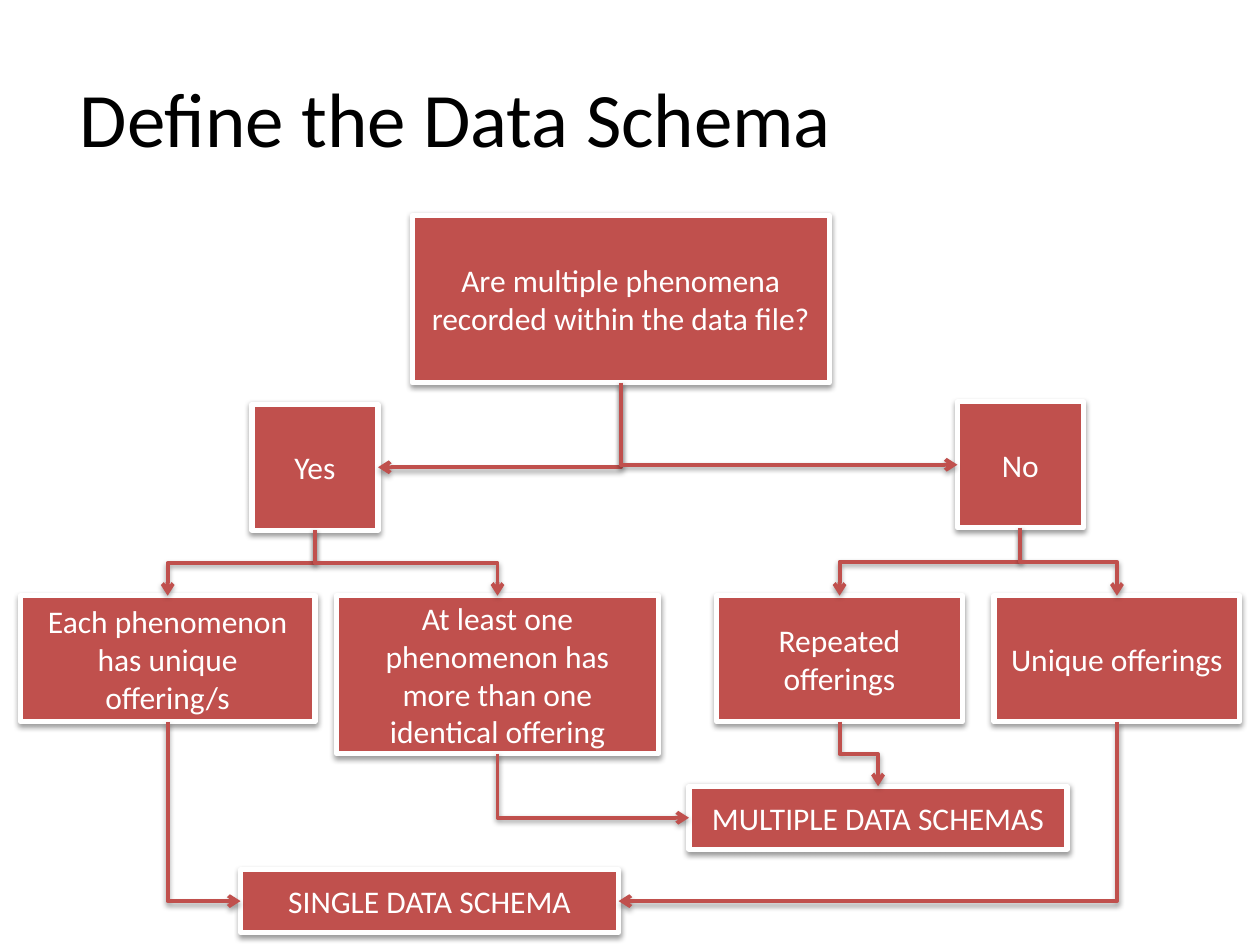
from dataclasses import dataclass

import pptx
import pptx.dml.color
import pptx.enum.shapes
import pptx.enum.text
import pptx.oxml.ns
import pptx.util
from lxml import etree

Cm = pptx.util.Cm
Pt = pptx.util.Pt
qn = pptx.oxml.ns.qn
BOTTOM = 2


@dataclass(frozen=True)
class Theme:
    """Colours, type sizes and line widths used on the slide."""
    font: str = "Calibri"
    title_size: int = 44
    body_size: int = 18
    ink: str = "000000"
    paper: str = "FFFFFF"
    accent: str = "C0504D"
    border: float = 3
    link: float = 2.25


THEME = Theme()

NODES = {
    "question": ("Are multiple phenomena recorded within the data file?", 7.9, 0, 8.41, 3.38),
    "yes": ("Yes", 4.67, 3.81, 2.54, 2.54),
    "no": ("No", 18.89, 3.76, 2.54, 2.54),
    "distinct": ("Each phenomenon has unique offering/s", 0, 7.67, 5.94, 2.54),
    "identical": ("At least one phenomenon has more than one identical offering",
                  6.37, 7.67, 6.5, 3.18),
    "repeated": ("Repeated offerings", 14.04, 7.67, 4.95, 2.54),
    "unique": ("Unique offerings", 19.63, 7.67, 4.95, 2.54),
    "single": ("SINGLE DATA SCHEMA", 4.44, 13.19, 7.62, 1.27),
    "multiple": ("MULTIPLE DATA SCHEMAS", 13.48, 11.51, 7.62, 1.27),
}

LINKS = [
    ("question", "yes", 3),
    ("question", "no", 1),
    ("yes", "distinct", 0),
    ("yes", "identical", 0),
    ("no", "repeated", 0),
    ("no", "unique", 0),
    ("unique", "single", 3),
    ("distinct", "single", 1),
    ("repeated", "multiple", 0),
    ("identical", "multiple", 1),
]


def rgb(value):
    """Return the colour for a hexadecimal string."""
    return pptx.dml.color.RGBColor.from_string(value)


def write(frame, text, *, size, color):
    """Write one centred paragraph in the middle of a text frame."""
    frame.word_wrap = True
    frame.vertical_anchor = pptx.enum.text.MSO_ANCHOR.MIDDLE
    para = frame.paragraphs[0]
    para.alignment = pptx.enum.text.PP_ALIGN.CENTER
    span = para.add_run()
    span.text = text
    span.font.name = THEME.font
    span.font.size = Pt(size)
    span.font.color.rgb = rgb(color)


def cast_shadow(item):
    """Give a shape or connector a soft shadow straight below it."""
    properties = item._element.spPr
    effects = properties.find(qn("a:effectLst"))
    if effects is None:
        effects = etree.SubElement(properties, qn("a:effectLst"))
    shadow = etree.SubElement(effects, qn("a:outerShdw"), blurRad="40000",
                              dist="20000", dir="5400000", rotWithShape="0")
    color = etree.SubElement(shadow, qn("a:srgbClr"), val=THEME.ink)
    etree.SubElement(color, qn("a:alpha"), val="38000")


def add_title(page, text, left, top, width, height):
    """Place the slide title in the given box."""
    box = page.shapes.add_textbox(left, top, width, height)
    write(box.text_frame, text, size=THEME.title_size, color=THEME.ink)


def add_node(page, text, left, top, width, height):
    """Place one bordered step of the decision tree."""
    box = page.shapes.add_shape(pptx.enum.shapes.MSO_SHAPE.RECTANGLE,
                                left, top, width, height)
    box.fill.solid()
    box.fill.fore_color.rgb = rgb(THEME.accent)
    box.line.color.rgb = rgb(THEME.paper)
    box.line.width = Pt(THEME.border)
    box.shadow.inherit = False
    cast_shadow(box)
    write(box.text_frame, text, size=THEME.body_size, color=THEME.paper)
    return box


def add_link(page, source, target, side):
    """Join the bottom of one node to a side of another with an elbow arrow."""
    link = page.shapes.add_connector(pptx.enum.shapes.MSO_CONNECTOR.ELBOW, 0, 0, 0, 0)
    link.begin_connect(source, BOTTOM)
    link.end_connect(target, side)
    across = link.end_x - link.begin_x
    down = link.end_y - link.begin_y
    middle_x = (link.begin_x + link.end_x) // 2
    middle_y = (link.begin_y + link.end_y) // 2
    link.width, link.height = down, abs(across)
    link.left = middle_x - link.width // 2
    link.top = middle_y - link.height // 2
    properties = link._element.spPr
    frame = properties.find(qn("a:xfrm"))
    frame.set("rot", "16200000" if across > 0 else "5400000")
    frame.set("flipH", "1" if across > 0 else "0")
    frame.set("flipV", "0")
    bends = "bentConnector3" if side == 0 else "bentConnector2"
    properties.find(qn("a:prstGeom")).set("prst", bends)
    link.line.color.rgb = rgb(THEME.accent)
    link.line.width = Pt(THEME.link)
    etree.SubElement(properties.find(qn("a:ln")), qn("a:tailEnd"), type="arrow")
    cast_shadow(link)


def add_decision_tree(page, left, top):
    """Place the nodes and their links relative to a top left corner."""
    boxes = {
        name: add_node(page, text, left + Cm(x), top + Cm(y), Cm(width), Cm(height))
        for name, (text, x, y, width, height) in NODES.items()
    }
    for source, target, side in LINKS:
        add_link(page, boxes[source], boxes[target], side)


def main():
    """Build the slide and save the deck."""
    deck = pptx.Presentation()
    deck.slide_width, deck.slide_height = Cm(25.4), Cm(19.05)
    page = deck.slides.add_slide(deck.slide_layouts[6])
    add_title(page, "Define the Data Schema", Cm(-0.08), Cm(0.76), Cm(18.54), Cm(3.18))
    add_decision_tree(page, Cm(0.41), Cm(4.34))
    deck.save("out.pptx")


if __name__ == "__main__":
    main()
